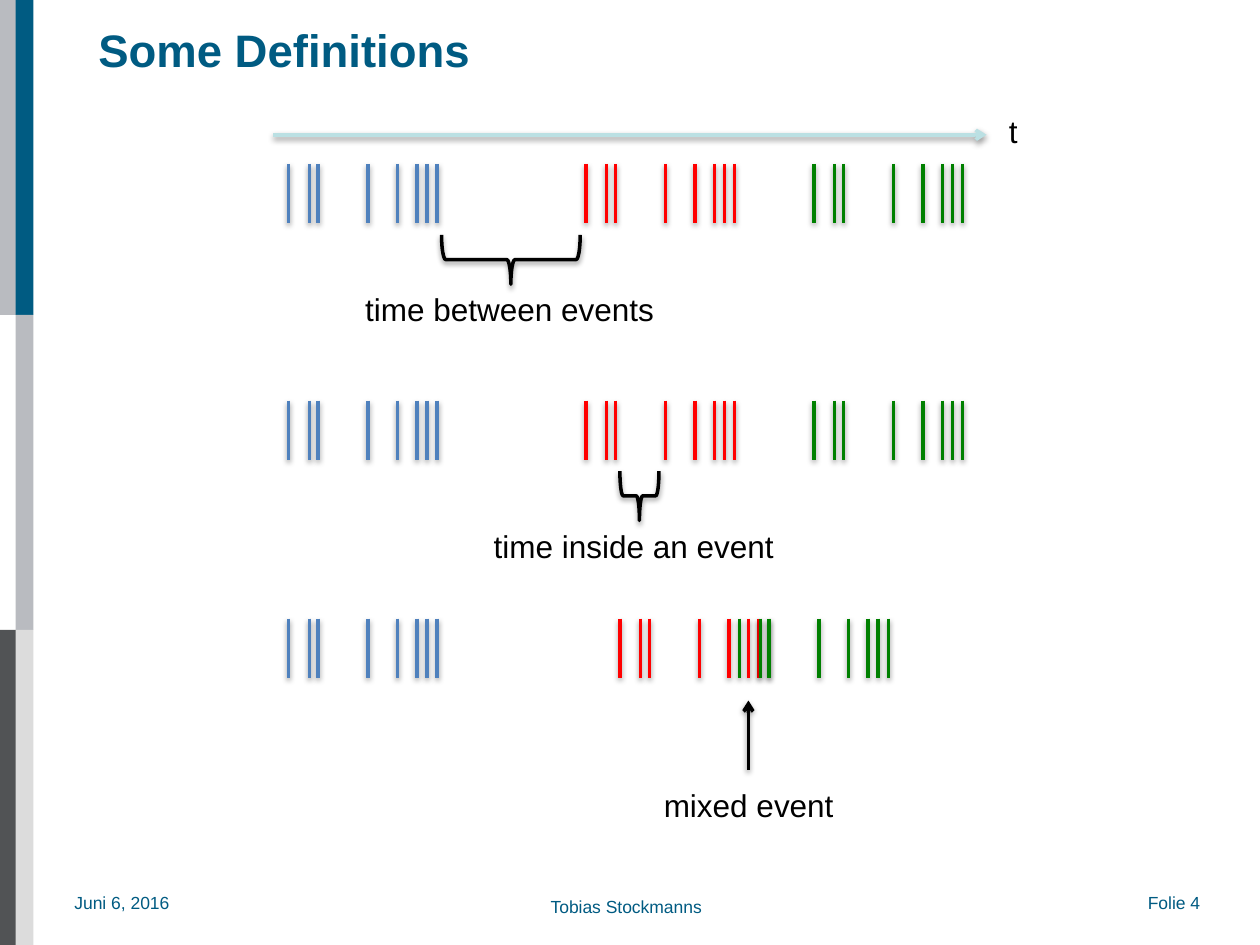
from lxml import etree
from pptx import Presentation, util as u
from pptx.dml.color import RGBColor
from pptx.enum import shapes, text
from pptx.oxml import ns

COLS, ROWS = 100, 75
WIDTH, HEIGHT = u.Inches(10), u.Inches(7.5)
PETROL, SILVER, BLACK = "005B82", "B9BBC0", "000000"
BLUE, RED, GREEN, PALE = "4F81BD", "FF0000", "008000", "BBE0E3"
HITS = (0, 1.65, 2.35, 6.3, 8.65, 10.2, 11, 11.8)
HIT_ROWS = 4.7


def col(n):
    return round(WIDTH * n / COLS)


def row(n):
    return round(HEIGHT * n / ROWS)


def box(x, y, w, h):
    return col(x), row(y), col(w), row(h)


def rgb(value):
    return RGBColor.from_string(value)


def child(parent, tag, **attrs):
    return etree.SubElement(parent, ns.qn(tag), attrs)


def add_shadow(effects):
    shadow = child(effects, "a:outerShdw", blurRad=str(u.Pt(3.1)),
                   dist=str(u.Pt(1.6)), dir="5400000", rotWithShape="0")
    color = child(shadow, "a:srgbClr", val=BLACK)
    child(color, "a:alpha", val="38000")


def style_line(line, color):
    line.color.rgb = rgb(color)
    line.width = u.Pt(2)


def add_line(s, start, end, color, arrow=False):
    c = s.shapes.add_connector(
        shapes.MSO_CONNECTOR.STRAIGHT,
        col(start[0]), row(start[1]), col(end[0]), row(end[1]))
    style_line(c.line, color)
    if arrow:
        child(c.line._get_or_add_ln(), "a:tailEnd", type="arrow")
    add_shadow(child(c._element.spPr, "a:effectLst"))


def add_event(s, x, y, color):
    for hit in HITS:
        add_line(s, (x + hit, y), (x + hit, y + HIT_ROWS), color)


def add_bar(s, x, y, color):
    bar = s.shapes.add_shape(shapes.MSO_SHAPE.RECTANGLE, *box(x, y, 1.4, ROWS / 3))
    bar.shadow.inherit = False
    bar.fill.solid()
    bar.fill.fore_color.rgb = rgb(color)
    bar.line.fill.background()


def add_brace(s, x, y, w, h):
    brace = s.shapes.add_shape(shapes.MSO_SHAPE.LEFT_BRACE, *box(x, y, w, h))
    brace.rotation = 270
    brace.fill.background()
    style_line(brace.line, BLACK)
    brace.shadow.inherit = False
    add_shadow(brace._element.spPr.find(ns.qn("a:effectLst")))


def no_margins(tf):
    tf.margin_left = tf.margin_top = tf.margin_right = tf.margin_bottom = 0


def add_run(tf, words, size, color, bold=False):
    p = tf.paragraphs[0]
    p.alignment = text.PP_ALIGN.LEFT
    r = p.add_run()
    r.text = words
    r.font.name = "Arial"
    r.font.size = u.Pt(size)
    r.font.bold = bold
    r.font.color.rgb = rgb(color)


def add_label(s, words, x, y, w, h=4, size=18, color=BLACK):
    tf = s.shapes.add_textbox(*box(x, y, w, h)).text_frame
    tf.word_wrap = False
    tf.auto_size = text.MSO_AUTO_SIZE.SHAPE_TO_FIT_TEXT
    add_run(tf, words, size, color)
    return tf


def add_footer(s, words, x, y, w):
    no_margins(add_label(s, words, x, y, w, 1.7, 10, PETROL))


def set_title(s, words):
    title = s.shapes.title
    title.left, title.top, title.width, title.height = box(7.8, 0.8, 72.7, 6.2)
    tf = title.text_frame
    no_margins(tf)
    tf.auto_size = text.MSO_AUTO_SIZE.NONE
    tf.vertical_anchor = text.MSO_ANCHOR.MIDDLE
    add_run(tf, words, 26, PETROL, bold=True)


def main():
    prs = Presentation()
    prs.slide_width, prs.slide_height = WIDTH, HEIGHT
    s = prs.slides.add_slide(prs.slide_layouts[5])

    for x, third, color in ((0, 0, SILVER), (0, 2, "515355"), (1.25, 0, PETROL),
                            (1.25, 1, SILVER), (1.25, 2, "DCDCDC")):
        add_bar(s, x, third * ROWS / 3, color)
    add_footer(s, "Juni 6, 2016", 5.9, 70.8, 8.5)
    add_footer(s, "Folie 4", 91.1, 70.8, 6.2)
    add_footer(s, "Tobias Stockmanns", 43.7, 71.1, 12.6)
    set_title(s, "Some Definitions")

    for y, red, green in ((13, 46.5, 64.6), (31.8, 46.5, 64.6), (49.1, 49.2, 58.7)):
        for x, color in ((22.9, BLUE), (red, RED), (green, GREEN)):
            add_event(s, x, y, color)

    add_line(s, (21.7, 10.7), (78.3, 10.7), PALE, arrow=True)
    add_label(s, "t", 79.1, 8.4, 2.7)
    add_brace(s, 38.6, 15.1, 3.9, 11)
    add_label(s, "time between events", 28, 22.5, 25.2)
    add_brace(s, 48.8, 37.8, 3.9, 3.1)
    add_label(s, "time inside an event", 38.2, 41.3, 24.5)
    add_line(s, (59.4, 61.1), (59.4, 55.6), BLACK, arrow=True)
    add_label(s, "mixed event", 51.7, 61.9, 15.6)

    prs.save("out.pptx")


if __name__ == "__main__":
    main()
